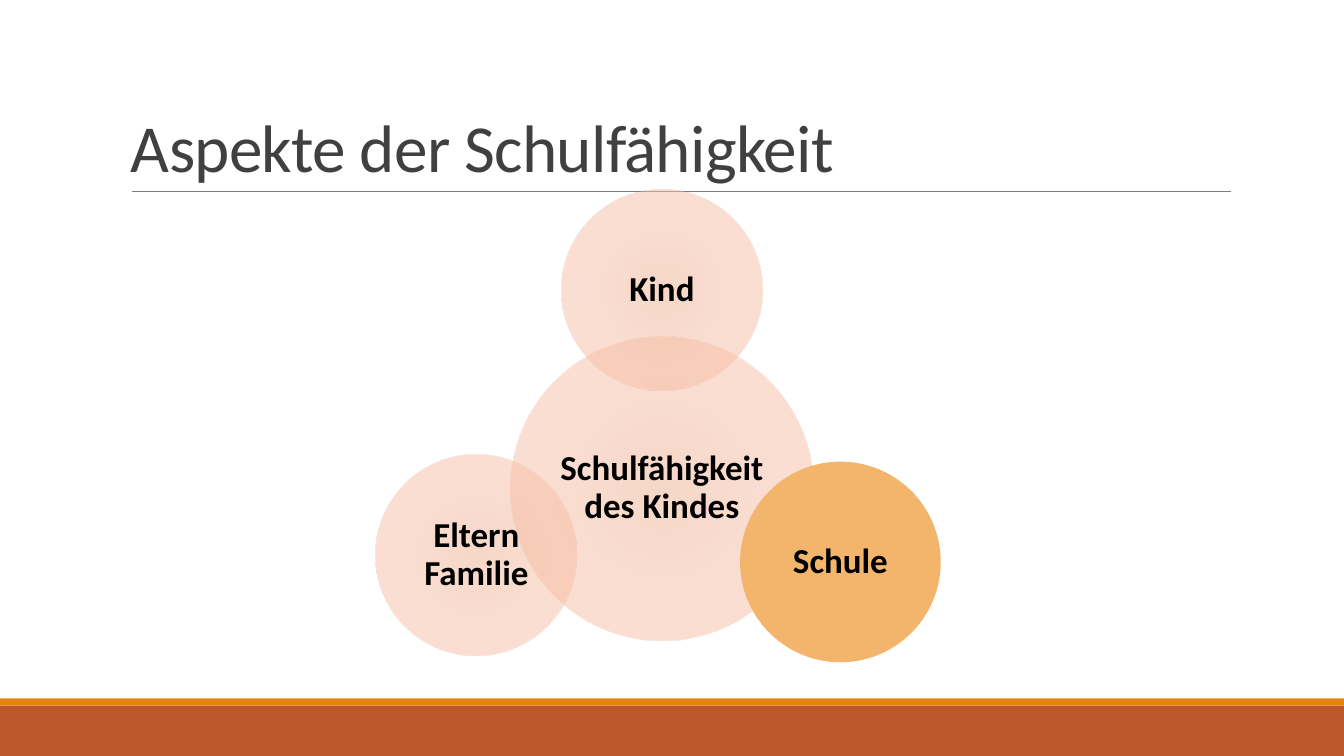
from lxml import etree
from pptx import Presentation
from pptx import util as u
from pptx.dml.color import RGBColor
from pptx.enum import shapes, text
from pptx.oxml import parse_xml
from pptx.oxml.ns import nsdecls, qn

RUST = RGBColor(0xBD, 0x58, 0x2C)
ORANGE = RGBColor(0xE4, 0x83, 0x12)
APRICOT = RGBColor(0xF3, 0xB5, 0x6C)
GREY = RGBColor(0x80, 0x80, 0x80)
CHARCOAL = RGBColor(0x40, 0x40, 0x40)
BLACK = RGBColor(0, 0, 0)
GLOW = [
    (0, RGBColor(0xF0, 0xB1, 0x91)),
    (45, RGBColor(0xF5, 0xBE, 0xA4)),
    (100, RGBColor(0xFD, 0xC3, 0xA8)),
]
WIDTH, HEIGHT = 13.33, 7.5
SMALL, LARGE = 1.99, 3.01


class Painter:
    """Draws styled elements on the current page."""

    font = "Calibri"

    def __init__(self, page):
        self.page = page

    def label(self, frame, words, size, color, spacing, bold=False):
        frame.word_wrap = True
        para = frame.paragraphs[0]
        para.text = words
        para.line_spacing = spacing
        for span in para.runs:
            span.font.name = self.font
            span.font.size = u.Pt(size)
            span.font.bold = bold
            span.font.color.rgb = color
        return para

    def shape(self, kind, left, top, width, height, color=None):
        shape = self.page.shapes.add_shape(
            kind, u.Inches(left), u.Inches(top), u.Inches(width), u.Inches(height))
        shape.shadow.inherit = False
        shape.line.fill.background()
        if color is None:
            self.glow(shape)
        else:
            shape.fill.solid()
            shape.fill.fore_color.rgb = color
        return shape

    def glow(self, shape):
        stops = "".join(
            f'<a:gs pos="{place * 1000}"><a:srgbClr val="{color}">'
            '<a:alpha val="50000"/></a:srgbClr></a:gs>' for place, color in GLOW)
        gradient = parse_xml(
            f'<a:gradFill {nsdecls("a")} rotWithShape="1"><a:gsLst>{stops}</a:gsLst>'
            '<a:path path="circle"><a:fillToRect l="100000" t="100000" '
            'r="100000" b="100000"/></a:path></a:gradFill>')
        shape._element.spPr.find(qn("a:prstGeom")).addnext(gradient)

    def band(self, top, height, color):
        self.shape(shapes.MSO_SHAPE.RECTANGLE, 0, top, WIDTH, height, color)

    def rule(self, left, right, top):
        line = self.page.shapes.add_connector(
            shapes.MSO_CONNECTOR.STRAIGHT,
            u.Inches(left), u.Inches(top), u.Inches(right), u.Inches(top))
        line.line.color.rgb = GREY
        line.line.width = u.Pt(0.5)
        etree.SubElement(line._element.spPr, qn("a:effectLst"))

    def title(self, words, left, top, width, height):
        box = self.page.shapes.add_textbox(
            u.Inches(left), u.Inches(top), u.Inches(width), u.Inches(height))
        box.text_frame.vertical_anchor = text.MSO_ANCHOR.BOTTOM
        para = self.label(box.text_frame, words, 48, CHARCOAL, 0.85)
        para.runs[0].font._element.set("spc", "-50")

    def circle(self, words, left, top, size, color=None):
        shape = self.shape(shapes.MSO_SHAPE.OVAL, left, top, size, size, color)
        frame = shape.text_frame
        frame.margin_left = frame.margin_right = u.Inches(0.03)
        frame.margin_top = frame.margin_bottom = u.Inches(0.03)
        frame.vertical_anchor = text.MSO_ANCHOR.MIDDLE
        para = self.label(frame, words, 25, BLACK, 0.9, bold=True)
        para.alignment = text.PP_ALIGN.CENTER


def main():
    deck = Presentation()
    deck.slide_width = u.Inches(WIDTH)
    deck.slide_height = u.Inches(HEIGHT)
    painter = Painter(deck.slides.add_slide(deck.slide_layouts[6]))
    painter.band(7, 0.5, RUST)
    painter.band(6.93, 0.07, ORANGE)
    painter.rule(1.31, 12.21, 1.9)
    painter.title("Aspekte der Schulfähigkeit", 1.2, 0.31, 11, 1.59)
    painter.circle("Schulfähigkeit des Kindes", 5.06, 3.34, LARGE)
    painter.circle("Kind", 5.57, 1.88, SMALL)
    painter.circle("Schule", 7.34, 4.58, SMALL, APRICOT)
    painter.circle("Eltern\vFamilie", 3.73, 4.51, SMALL)
    deck.save("out.pptx")


if __name__ == "__main__":
    main()
